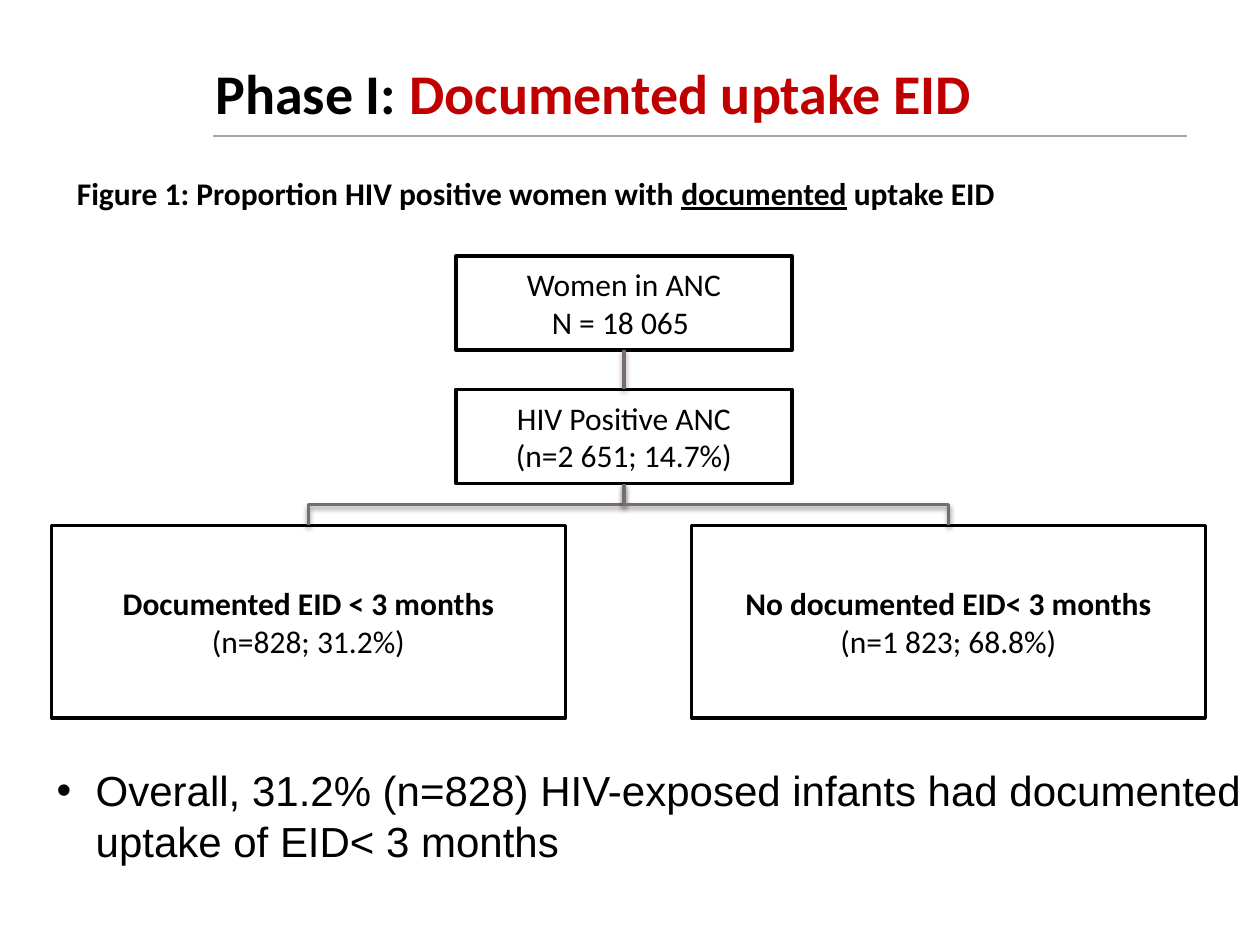
from dataclasses import dataclass

from lxml import etree
from pptx import Presentation
from pptx.dml.color import RGBColor
from pptx.enum.shapes import MSO_CONNECTOR, MSO_SHAPE
from pptx.enum.text import MSO_ANCHOR, PP_ALIGN
from pptx.oxml.ns import qn
from pptx.util import Cm, Pt

RECT = MSO_SHAPE.RECTANGLE
STRAIGHT, ELBOW = MSO_CONNECTOR.STRAIGHT, MSO_CONNECTOR.ELBOW
TOP, MIDDLE = MSO_ANCHOR.TOP, MSO_ANCHOR.MIDDLE
LEFT, CENTER = PP_ALIGN.LEFT, PP_ALIGN.CENTER
BLACK, WHITE, RED = "000000", "FFFFFF", "C00000"
RULE, LINK = "A6A6A6", "786C71"


@dataclass
class Part:
    text: str
    bold: bool = False
    color: str = BLACK
    under: bool = False


@dataclass
class Box:
    left: float
    top: float
    width: float
    height: float
    lines: list[list[Part]]


def paint(color, value: str):
    color.rgb = RGBColor.from_string(value)


def write(frame, lines: list[list[Part]], size: float, font: str, align):
    """Fill a text frame, one paragraph per line and one run per part."""
    frame.word_wrap = True
    for i, parts in enumerate(lines):
        para = frame.paragraphs[0] if i == 0 else frame.add_paragraph()
        para.alignment = align
        for part in parts:
            run = para.add_run()
            run.text = part.text
            run.font.name, run.font.size = font, Pt(size)
            run.font.bold, run.font.underline = part.bold, part.under
            paint(run.font.color, part.color)


def draw_box(slide, box: Box, size=18, font="Calibri", framed=False):
    shape = slide.shapes.add_shape(
        RECT, Cm(box.left), Cm(box.top), Cm(box.width), Cm(box.height))
    shape.shadow.inherit = False
    shape.fill.solid()
    paint(shape.fill.fore_color, WHITE)
    if framed:
        paint(shape.line.color, BLACK)
        shape.line.width = Pt(2)
    else:
        shape.line.fill.background()
    frame = shape.text_frame
    frame.vertical_anchor = MIDDLE if framed else TOP
    write(frame, box.lines, size, font, CENTER if framed else LEFT)
    return shape


def style(line, color: str, width: float, shadow: bool):
    paint(line.line.color, color)
    line.line.width = Pt(width)
    effects = etree.SubElement(line._element.spPr, qn("a:effectLst"))
    if shadow:
        outer = etree.SubElement(
            effects, qn("a:outerShdw"), blurRad=str(Pt(3.1)),
            dist=str(Pt(1.6)), dir="5400000", rotWithShape="0")
        tint = etree.SubElement(outer, qn("a:srgbClr"), val=BLACK)
        etree.SubElement(tint, qn("a:alpha"), val="38000")


def join(slide, upper, lower, kind):
    """Link the bottom of one box to the top of another."""
    line = slide.shapes.add_connector(kind, 0, 0, 0, 0)
    line.begin_connect(upper, 2)
    line.end_connect(lower, 0)
    if kind == ELBOW:
        turn(line)
    style(line, LINK, 2, True)


def turn(line):
    """Rotate an elbow so that it leaves and arrives vertically."""
    x1, y1, x2, y2 = line.begin_x, line.begin_y, line.end_x, line.end_y
    wide, high = y2 - y1, abs(x2 - x1)
    line.left, line.top = (x1 + x2 - wide) // 2, (y1 + y2 - high) // 2
    line.width, line.height = wide, high
    xfrm = line._element.spPr.find(qn("a:xfrm"))
    right = x2 > x1
    xfrm.set("rot", "16200000" if right else "5400000")
    xfrm.set("flipH", "1" if right else "0")
    xfrm.set("flipV", "0")


def bullet(para, indent):
    props = para._p.get_or_add_pPr()
    props.set("marL", str(indent))
    props.set("indent", str(-indent))
    etree.SubElement(props, qn("a:buFont"), typeface="Arial")
    etree.SubElement(props, qn("a:buChar"), char="•")


def main():
    deck = Presentation()
    deck.slide_width, deck.slide_height = Cm(25.4), Cm(19.05)
    slide = deck.slides.add_slide(deck.slide_layouts[6])

    title = slide.shapes.add_textbox(Cm(4.09), Cm(1.06), Cm(20.04), Cm(1.65))
    write(title.text_frame, [[Part("Phase I: ", True),
                              Part("Documented uptake EID", True, RED)]],
          32, "Calibri", LEFT)
    rule = slide.shapes.add_connector(
        STRAIGHT, Cm(4.29), Cm(2.74), Cm(23.93), Cm(2.74))
    style(rule, RULE, 1.25, False)

    caption = draw_box(slide, Box(1.55, 3.5, 22.71, 1.19, [[
        Part("Figure 1: Proportion HIV positive women with ", True),
        Part("documented", True, under=True),
        Part(" uptake EID", True)]]))
    frame = caption.text_frame
    frame.margin_left = frame.margin_right = 0
    frame.margin_top = frame.margin_bottom = 0
    frame.paragraphs[0].space_after = Pt(10)

    note = draw_box(slide, Box(0.89, 15.29, 24.51, 2.24, [[
        Part("Overall, 31.2% (n=828) HIV-exposed infants had documented "
             "uptake of EID< 3 months")]]), 24, "Arial")
    bullet(note.text_frame.paragraphs[0], Cm(0.79))

    chart = [
        Box(9.19, 5.16, 6.78, 1.9,
            [[Part("Women in ANC")], [Part("N = 18 065 ")]]),
        Box(9.19, 7.85, 6.78, 1.9,
            [[Part("HIV Positive ANC")], [Part("(n=2 651; 14.7%)")]]),
        Box(1.04, 10.59, 10.36, 3.89,
            [[Part("Documented EID < 3 months", True)],
             [Part("(n=828; 31.2%)")]]),
        Box(13.94, 10.59, 10.36, 3.89,
            [[Part("No documented EID< 3 months", True)],
             [Part("(n=1 823; 68.8%)")]]),
    ]
    women, cases, done, missed = [
        draw_box(slide, box, framed=True) for box in chart]
    join(slide, women, cases, STRAIGHT)
    for leaf in (done, missed):
        join(slide, cases, leaf, ELBOW)

    deck.save("out.pptx")


if __name__ == "__main__":
    main()
